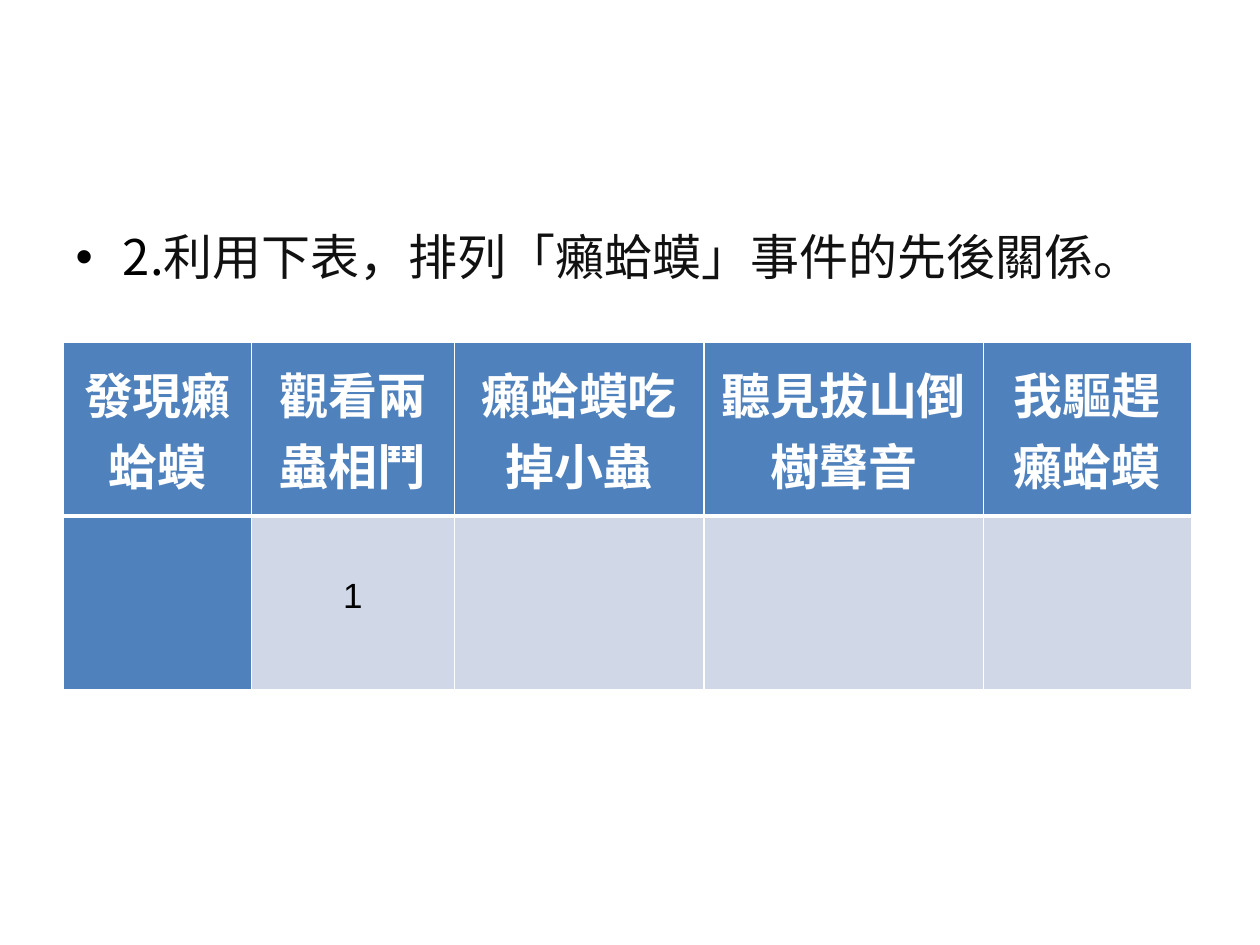
"""Build a slide with a sequencing exercise and its event table."""
from lxml import etree
from pptx import Presentation
from pptx.dml.color import RGBColor
from pptx.enum.text import MSO_ANCHOR, PP_ALIGN
from pptx.oxml.ns import qn
from pptx.util import Pt

MIDDLE = MSO_ANCHOR.MIDDLE
CENTER = PP_ALIGN.CENTER
TOP = MSO_ANCHOR.TOP
LEFT = PP_ALIGN.LEFT

BLACK = RGBColor(0x00, 0x00, 0x00)
INK = RGBColor(0x11, 0x11, 0x11)
WHITE = RGBColor(0xFF, 0xFF, 0xFF)
BLUE = RGBColor(0x4F, 0x81, 0xBD)
PALE_BLUE = RGBColor(0xD0, 0xD8, 0xE8)

CJK_FONT = "Noto Sans CJK SC"
QUESTION = [
    ("2.", CJK_FONT, BLACK),
    ("利用下表，排列「癩蛤蟆」事件的先後關係。", "Arial", INK),
]
EVENTS = ["發現癩蛤蟆", "觀看兩蟲相鬥", "癩蛤蟆吃掉小蟲", "聽見拔山倒樹聲音", "我驅趕癩蛤蟆"]
ORDER = ["", "1", "", "", ""]
COLUMN_WIDTHS = [107.2, 116, 142.6, 159.8, 118.8]
ROW_HEIGHT = 99.5
CELL_MARGIN = 3.6
THIN, THICK = 1, 3


def add_run(paragraph, text, font_name, size, color, bold=False):
    run = paragraph.add_run()
    run.text = text
    font = run.font
    font.name, font.size, font.bold = font_name, Pt(size), bold
    font.color.rgb = color
    east_asian = etree.Element(qn("a:ea"), typeface=CJK_FONT)
    run._r.get_or_add_rPr().find(qn("a:latin")).addnext(east_asian)


def set_borders(cell, widths):
    properties = cell._tc.get_or_add_tcPr()
    for position, (side, width) in enumerate(widths.items()):
        line = etree.Element(qn(f"a:ln{side}"), w=str(Pt(width)))
        fill = etree.SubElement(line, qn("a:solidFill"))
        etree.SubElement(fill, qn("a:srgbClr"), val=str(WHITE))
        properties.insert(position, line)


def add_question(slide):
    body = slide.placeholders[1]
    body.left, body.top, body.width, body.height = Pt(36), Pt(126), Pt(648), Pt(78)
    body.text_frame.vertical_anchor = TOP
    paragraph = body.text_frame.paragraphs[0]
    paragraph.alignment = LEFT
    for text, font_name, color in QUESTION:
        add_run(paragraph, text, font_name, 28, color)


def add_event_table(slide):
    rows = [EVENTS, ORDER]
    frame = slide.shapes.add_table(
        len(rows), len(EVENTS), Pt(36.4), Pt(195.3),
        Pt(sum(COLUMN_WIDTHS)), Pt(ROW_HEIGHT * len(rows)))
    table = frame.table
    for column, width in zip(table.columns, COLUMN_WIDTHS):
        column.width = Pt(width)
    for row_index, texts in enumerate(rows):
        table.rows[row_index].height = Pt(ROW_HEIGHT)
        is_header = row_index == 0
        for column_index, text in enumerate(texts):
            cell = table.cell(row_index, column_index)
            cell.fill.solid()
            cell.fill.fore_color.rgb = BLUE if is_header or column_index == 0 else PALE_BLUE
            cell.vertical_anchor = MIDDLE
            cell.margin_left = cell.margin_right = Pt(CELL_MARGIN)
            cell.margin_top = cell.margin_bottom = Pt(CELL_MARGIN)
            set_borders(cell, {
                "L": THIN, "R": THIN,
                "T": THIN if is_header else THICK,
                "B": THICK if is_header else THIN,
            })
            paragraph = cell.text_frame.paragraphs[0]
            paragraph.alignment = CENTER
            if is_header:
                add_run(paragraph, text, "Times New Roman", 28, WHITE, True)
            elif text:
                paragraph.line_spacing = Pt(15)
                add_run(paragraph, text, "Arial", 20, BLACK)


def main():
    presentation = Presentation()
    presentation.slide_width, presentation.slide_height = Pt(720), Pt(540)
    slide = presentation.slides.add_slide(presentation.slide_layouts[1])
    title = slide.shapes.title.element
    title.getparent().remove(title)
    add_question(slide)
    add_event_table(slide)
    presentation.save("out.pptx")


if __name__ == "__main__":
    main()
